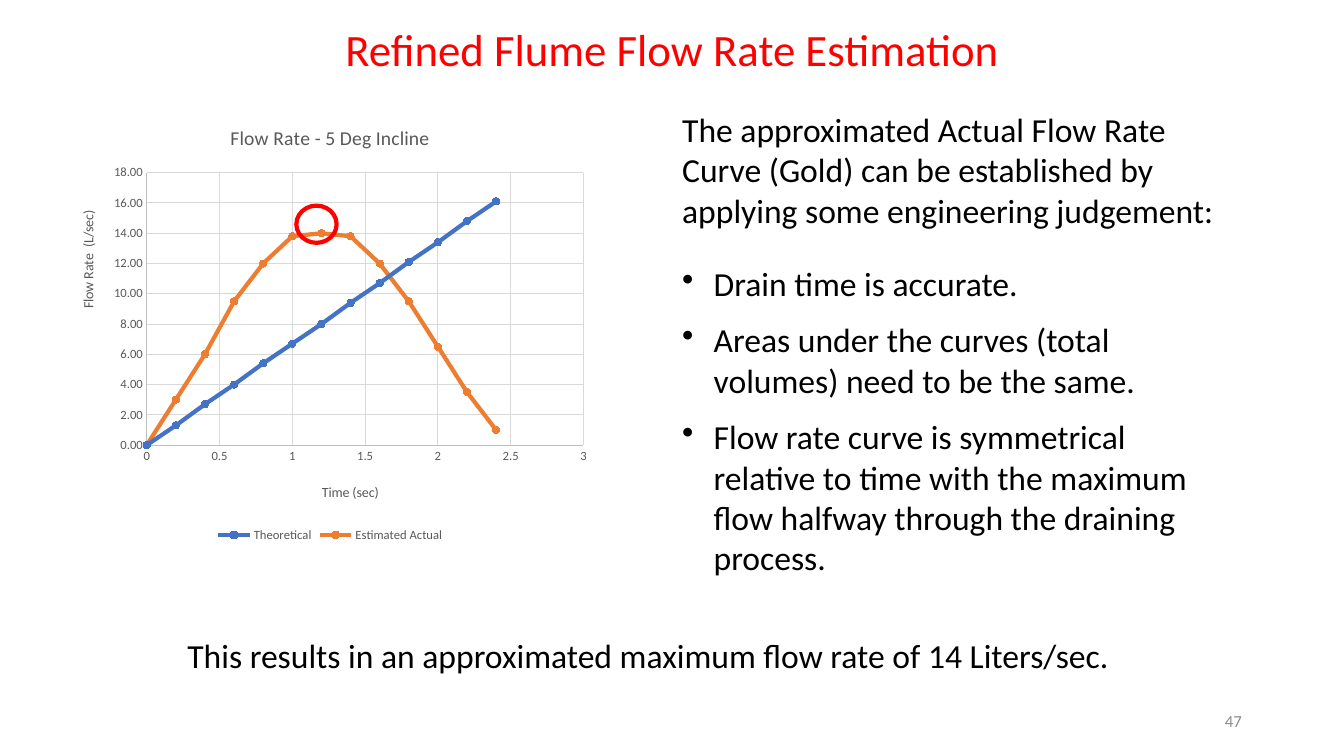
import pptx
import pptx.util
import pptx.dml.color
import pptx.chart.data
import pptx.enum.chart
import pptx.enum.shapes
import pptx.enum.text
import pptx.oxml
import pptx.oxml.ns

Pt = pptx.util.Pt
qn = pptx.oxml.ns.qn
kinds = pptx.enum.chart
GREY = "595959"


def color(code):
    return pptx.dml.color.RGBColor.from_string(code)


def write(text, left, top, width, height, size=24, ink="000000",
          align="LEFT", anchor="TOP", bullet=False):
    box = slide.shapes.add_textbox(Pt(left), Pt(top), Pt(width), Pt(height))
    frame = box.text_frame
    frame.word_wrap = True
    frame.vertical_anchor = getattr(pptx.enum.text.MSO_ANCHOR, anchor)
    para = frame.paragraphs[0]
    para.alignment = getattr(pptx.enum.text.PP_ALIGN, align)
    run = para.add_run()
    run.text = text
    run.font.name = "Calibri"
    run.font.size = Pt(size)
    run.font.color.rgb = color(ink)
    if bullet:
        props = para._p.get_or_add_pPr()
        props.set("marL", str(Pt(22.5)))
        props.set("indent", str(-Pt(22.5)))
        mark = pptx.oxml.parse_xml(
            f'<a:buChar {pptx.oxml.ns.nsdecls("a")} char="•"/>')
        props.append(mark)


deck = pptx.Presentation()
deck.slide_width, deck.slide_height = Pt(960), Pt(540)
slide = deck.slides.add_slide(deck.slide_layouts[6])

# Flow rate data
flows = [
    ("Theoretical", "4472C4",
     [0, 1.3, 2.7, 4, 5.4, 6.7, 8, 9.4, 10.7, 12.1, 13.4, 14.8, 16.1]),
    ("Estimated Actual", "ED7D31",
     [0, 3, 6, 9.5, 12, 13.8, 14, 13.8, 12, 9.5, 6.5, 3.5, 1]),
]
data = pptx.chart.data.XyChartData()
for name, ink, rates in flows:
    series = data.add_series(name)
    for step, rate in enumerate(rates):
        series.add_data_point(round(step * 0.2, 1), rate)

# Chart
chart = slide.shapes.add_chart(
    kinds.XL_CHART_TYPE.XY_SCATTER_LINES,
    Pt(43.2), Pt(76.3), Pt(385.2), Pt(313.9), data).chart
chart.font.name = "Calibri"
chart.font.size = Pt(9)
chart.font.color.rgb = color(GREY)
chart.has_legend = True
chart.legend.position = kinds.XL_LEGEND_POSITION.BOTTOM
chart.legend.include_in_layout = False
chart.plots[0].vary_by_categories = False
chart.has_title = True

for series, (name, ink, rates) in zip(chart.plots[0].series, flows):
    series.smooth = False
    series.format.line.color.rgb = color(ink)
    series.format.line.width = Pt(3)
    series.marker.style = kinds.XL_MARKER_STYLE.CIRCLE
    series.marker.size = 5
    series.marker.format.fill.solid()
    series.marker.format.fill.fore_color.rgb = color(ink)
    series.marker.format.line.color.rgb = color(ink)

# Axes
across, upward = chart.category_axis, chart.value_axis
for axis, top, step, style in [(across, 3, 0.5, "General"),
                               (upward, 18, 2, "0.00")]:
    axis.minimum_scale, axis.maximum_scale = 0, top
    axis.major_unit = step
    axis.major_tick_mark = kinds.XL_TICK_MARK.NONE
    axis.minor_tick_mark = kinds.XL_TICK_MARK.NONE
    axis.tick_labels.number_format = style
    axis.tick_labels.number_format_is_linked = False
    axis.has_major_gridlines = True
    for line, ink in [(axis.format.line, "BFBFBF"),
                      (axis.major_gridlines.format.line, "D9D9D9")]:
        line.color.rgb = color(ink)
        line.width = Pt(0.75)

# Chart and axis titles
for title, text, size in [
        (chart.chart_title, "Flow Rate - 5 Deg Incline", 14),
        (across.axis_title, "Time (sec)", 10),
        (upward.axis_title, "Flow Rate  (L/sec)", 10)]:
    title.text_frame.text = text
    font = title.text_frame.paragraphs[0].runs[0].font
    font.name, font.size, font.bold = "Calibri", Pt(size), False
    font.color.rgb = color(GREY)

# Places within the chart, as shares of its size
plot = chart._chartSpace.chart.plotArea
for node, spot, extra in [
        (plot, {"x": 0.16, "y": 0.15, "w": 0.81, "h": 0.62}, True),
        (across.axis_title._element, {"x": 0.48, "y": 0.85}, False),
        (upward.axis_title._element, {"x": 0.03, "y": 0.23}, False)]:
    for old in node.findall(qn("c:layout")):
        node.remove(old)
    inner = '<c:layoutTarget val="inner"/>' if extra else ""
    modes = "".join(f'<c:{key}Mode val="edge"/>' for key in "xy")
    sizes = "".join(f'<c:{key} val="{val}"/>' for key, val in spot.items())
    layout = pptx.oxml.parse_xml(
        f'<c:layout {pptx.oxml.ns.nsdecls("c")}><c:manualLayout>'
        f'{inner}{modes}{sizes}</c:manualLayout></c:layout>')
    node.insert(0 if extra else 1, layout)

# Ring around the peak
ring = slide.shapes.add_shape(
    pptx.enum.shapes.MSO_SHAPE.OVAL, Pt(211.7), Pt(146.9), Pt(28.8), Pt(26.6))
ring.shadow.inherit = False
ring.fill.background()
ring.line.color.rgb = color("FF0000")
ring.line.width = Pt(3)

# Title, reasoning and result
write("Refined Flume Flow Rate Estimation", 162.7, 12.2, 635, 46,
      size=32, ink="FF0000", align="CENTER")
write("The approximated Actual Flow Rate Curve (Gold) can be established by "
      "applying some engineering judgement:", 480.2, 74.2, 404.6, 94.3)
for text, top, width, height in [
        ("Drain time is accurate.", 184.3, 353.5, 36),
        ("Areas under the curves (total volumes) need to be the same.",
         224.6, 404.6, 65.5),
        ("Flow rate curve is symmetrical relative to time with the maximum "
         "flow halfway through the draining process.", 293.8, 396, 123.8)]:
    write(text, 480.2, top, width, height, bullet=True)
write("This results in an approximated maximum flow rate of 14 Liters/sec.",
      126.7, 450, 757.4, 36)

# Page number
write("47", 678.2, 500.4, 216, 28.8, size=12, ink="8C8C8C",
      align="RIGHT", anchor="MIDDLE")

deck.save("out.pptx")
